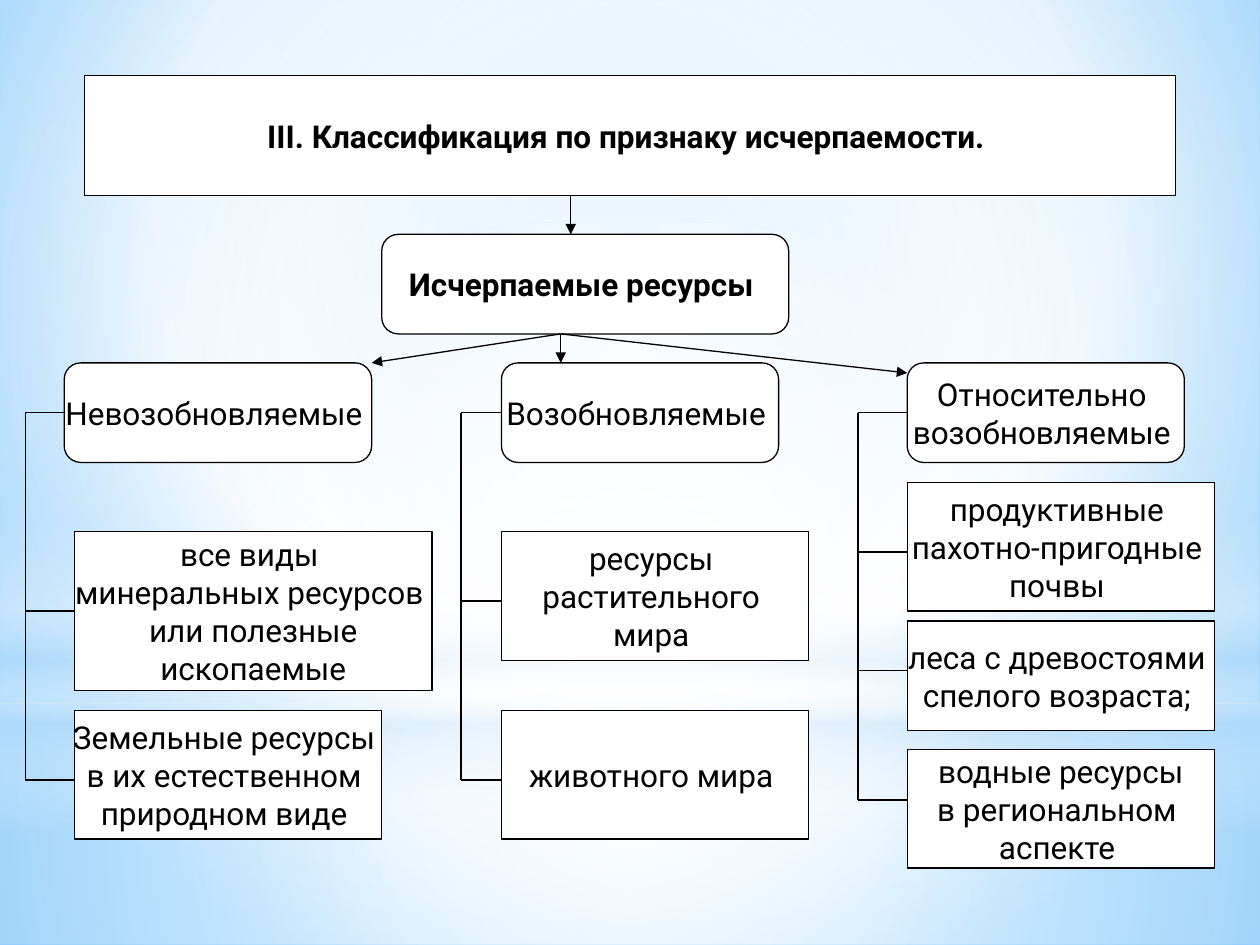
from pptx import Presentation
from pptx.dml.color import RGBColor
from pptx.enum.shapes import MSO_CONNECTOR, MSO_SHAPE
from pptx.enum.text import MSO_ANCHOR, MSO_AUTO_SIZE, PP_ALIGN
from pptx.oxml import parse_xml
from pptx.oxml.ns import nsdecls, qn
from pptx.util import Inches, Pt
from lxml.etree import SubElement

COLORS = {"black": "000000", "white": "FFFFFF", "pale": "B4DCFA", "sky": "9ED5FF", "blue": "5BB9FF"}
BOX_FORMAT = {"word_wrap": False, "auto_size": MSO_AUTO_SIZE.NONE, "vertical_anchor": MSO_ANCHOR.MIDDLE}
FONT_FORMAT = {"name": "Roboto", "size": Pt(18)}

deck = Presentation()
deck.slide_width, deck.slide_height = Inches(10), Inches(7.5)
page = deck.slides.add_slide(deck.slide_layouts[5])


def set_gradient(element, stops, center=None):
    marks = "".join(
        f'<a:gs pos="{position * 1000}"><a:srgbClr val="{COLORS[color]}">'
        f'<a:alpha val="{alpha * 1000}"/></a:srgbClr></a:gs>'
        for position, color, alpha in stops
    )
    if center:
        left, top, right, bottom = [side * 1000 for side in center]
        course = (f'<a:path path="circle"><a:fillToRect l="{left}" t="{top}" '
                  f'r="{right}" b="{bottom}"/></a:path>')
    else:
        course = '<a:lin ang="5400000" scaled="0"/>'
    old = element.find(".//" + qn("a:gradFill"))
    old.getparent().replace(old, parse_xml(
        f'<a:gradFill {nsdecls("a")} rotWithShape="1"><a:gsLst>{marks}</a:gsLst>{course}</a:gradFill>'))


def fill_box(box, lines, bold=False):
    box.fill.solid()
    box.fill.fore_color.rgb = RGBColor.from_string(COLORS["white"])
    box.line.color.rgb = RGBColor.from_string(COLORS["black"])
    box.line.width = Pt(0.75)
    for name, value in BOX_FORMAT.items():
        setattr(box.text_frame, name, value)
    box.text_frame.text = "\n".join(lines)
    for para in box.text_frame.paragraphs:
        para.alignment = PP_ALIGN.CENTER
        for span in para.runs:
            for name, value in FONT_FORMAT.items():
                setattr(span.font, name, value)
            span.font.bold = bold
            span.font.color.rgb = RGBColor.from_string(COLORS["black"])


page.background.fill.gradient()
set_gradient(page.element, [(0, "sky", 100), (60, "white", 100), (100, "blue", 100)], (20, 10, 20, 60))

middle = (50, 50, 50, 50)
glows = [
    (MSO_SHAPE.RECTANGLE, 5.58, 1.92, [(0, "white", 91), (37, "white", 76), (100, "pale", 79)], middle),
    (MSO_SHAPE.RECTANGLE, 0, 5.58, [(0, "white", 89), (48, "white", 62), (100, "pale", 79)], middle),
    (MSO_SHAPE.RECTANGLE, 4.12, 2.5, [(0, "white", 0), (29, "white", 30), (45, "pale", 40),
                                      (55, "white", 26), (65, "pale", 60), (100, "white", 0)], None),
    (MSO_SHAPE.OVAL, 1.75, 5.58, [(0, "white", 100), (56, "white", 0)], middle),
]
master_tree = deck.slide_master.shapes.element
for order, (kind, top, height, stops, center) in enumerate(glows):
    glow = page.shapes.add_shape(kind, 0, Inches(top), Inches(10), Inches(height))
    glow.shadow.inherit = False
    glow.line.fill.background()
    glow.fill.gradient()
    set_gradient(glow.element, stops, center)
    master_tree.insert(2 + order, glow.element)

title = page.shapes.title
title.left, title.top, title.width, title.height = [Inches(side) for side in (0.67, 0.6, 8.66, 0.95)]
title.element.spPr.find(qn("a:xfrm")).addnext(
    parse_xml(f'<a:prstGeom {nsdecls("a")} prst="flowChartTerminator"><a:avLst/></a:prstGeom>'))
fill_box(title, ["III. Классификация по признаку исчерпаемости. "], bold=True)

root = page.shapes.add_shape(MSO_SHAPE.FLOWCHART_ALTERNATE_PROCESS,
                             Inches(3.03), Inches(1.86), Inches(3.23), Inches(0.79))
root.shadow.inherit = False
fill_box(root, ["Исчерпаемые ресурсы "], bold=True)

head_top, head_height, head_joint = 2.88, 0.79, 3.28
columns = [
    (0.2, (0.51, 2.44, ["Невозобновляемые "]), [
        (0.59, 4.22, 2.84, 1.26, 4.85,
         ["все виды ", "минеральных ресурсов ", "или полезные", " ископаемые "]),
        (0.59, 5.64, 2.44, 1.02, 6.19, ["Земельные ресурсы ", "в их естественном ", "природном виде "]),
    ]),
    (3.66, (3.98, 2.2, ["Возобновляемые "]), [
        (3.98, 4.22, 2.44, 1.02, 4.77, ["ресурсы ", "растительного ", "мира "]),
        (3.98, 5.64, 2.44, 1.02, 6.19, ["животного мира "]),
    ]),
    (6.81, (7.2, 2.2, ["Относительно ", "возобновляемые "]), [
        (7.2, 3.83, 2.44, 1.02, 4.38, ["продуктивные ", "пахотно-пригодные ", "почвы "]),
        (7.2, 4.93, 2.44, 0.87, 5.32, ["леса с древостоями ", "спелого возраста; "]),
        (7.2, 5.95, 2.44, 0.94, 6.35, ["водные ресурсы", "в региональном ", "аспекте "]),
    ]),
]

links = [
    (4.53, 1.55, 4.53, 1.86, True, None),
    (4.45, 2.65, 2.95, 2.88, True, None),
    (4.45, 2.65, 7.2, 2.96, True, None),
    (4.45, 2.65, 4.45, 2.88, True, None),
]
for trunk, (head_left, head_width, head_lines), items in columns:
    head = (head_left, head_top, head_width, head_height, head_joint, head_lines)
    links.append((trunk, head_joint, trunk, items[-1][4], False, None))
    for left, top, width, height, joint, lines in [head] + items:
        kind = MSO_SHAPE.FLOWCHART_ALTERNATE_PROCESS if top == head_top else MSO_SHAPE.RECTANGLE
        box = page.shapes.add_shape(kind, Inches(left), Inches(top), Inches(width), Inches(height))
        box.shadow.inherit = False
        fill_box(box, lines)
        centered = abs(top + height / 2 - joint) < 0.01
        links.append((trunk, joint, left, joint, False, box if centered else None))

for x1, y1, x2, y2, arrow, target in links:
    link = page.shapes.add_connector(MSO_CONNECTOR.STRAIGHT, Inches(x1), Inches(y1), Inches(x2), Inches(y2))
    if target is not None:
        link.end_connect(target, 1)
        link.begin_y = link.end_y
    link.line.color.rgb = RGBColor.from_string(COLORS["black"])
    link.line.width = Pt(0.75)
    if arrow:
        SubElement(link.line._get_or_add_ln(), qn("a:tailEnd"), type="triangle")
    SubElement(link.element.spPr, qn("a:effectLst"))

deck.save("out.pptx")
